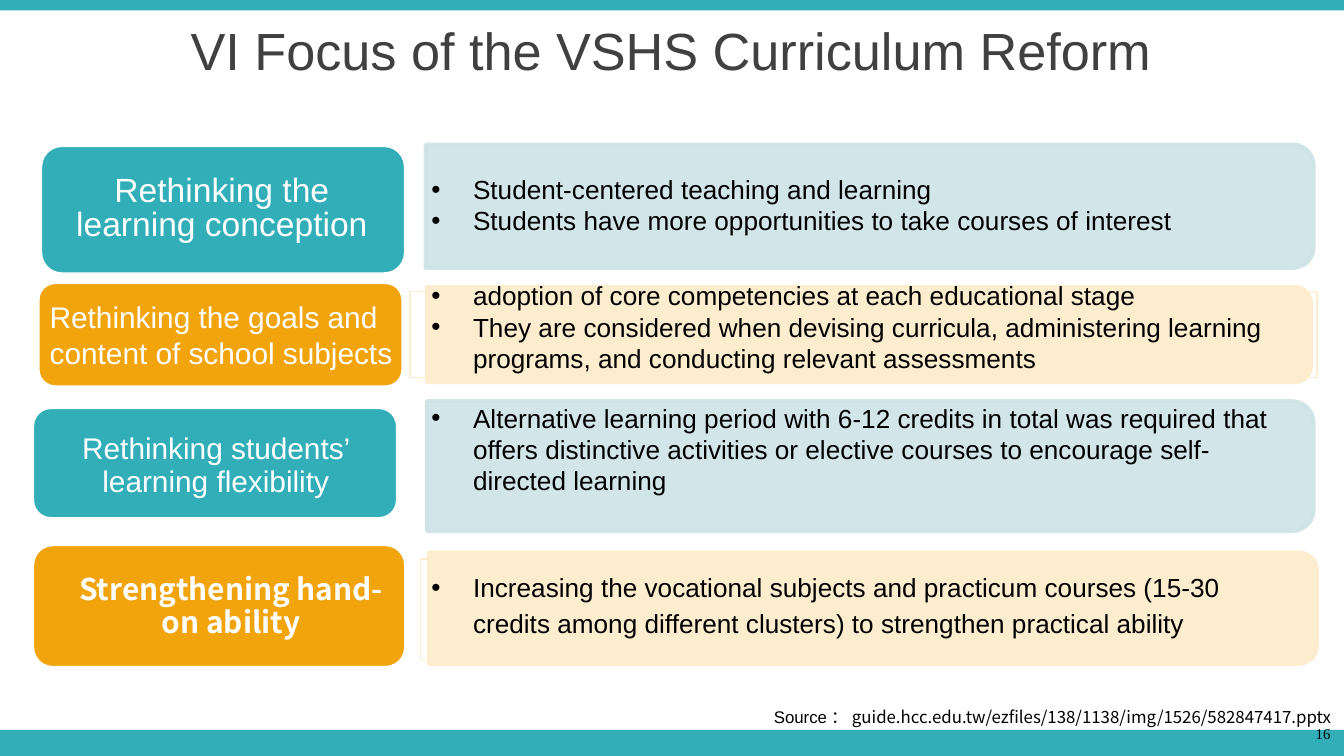
from dataclasses import dataclass

from lxml.etree import SubElement
from pptx import Presentation
from pptx.dml.color import RGBColor
from pptx.enum.shapes import MSO_SHAPE as Preset
from pptx.enum.text import MSO_ANCHOR as Anchor, MSO_AUTO_SIZE as AutoSize, PP_ALIGN as Align
from pptx.oxml.ns import qn
from pptx.util import Pt

COLORS = {
    "teal": "32AEB8", "orange": "F2A40D", "pale_teal": "CEE3E6",
    "pale_orange": "FCEDCF", "white": "FFFFFF", "black": "000000", "gray": "404040",
}
SANS, CJK, SERIF = "Arial", "Noto Sans CJK SC", "Times New Roman"
INDENT = 22.3


@dataclass
class Box:
    left: float
    top: float
    width: float
    height: float

    def inner(self, left, top, width, height):
        return Box(self.left + left, self.top + top, width, height)

    def lengths(self):
        return [Pt(n) for n in (self.left, self.top, self.width, self.height)]


def rgb(name):
    return RGBColor.from_string(COLORS[name])


def add_block(page, preset, box, fill=None, line=None, weight=2, alpha=None):
    block = page.shapes.add_shape(preset, *box.lengths())
    block.shadow.inherit = False
    if fill:
        block.fill.solid()
        block.fill.fore_color.rgb = rgb(fill)
    else:
        block.fill.background()
    if line:
        block.line.color.rgb = rgb(line)
        block.line.width = Pt(weight)
    else:
        block.line.fill.background()
    if alpha:
        for color in block._element.spPr.iter(qn("a:srgbClr")):
            SubElement(color, qn("a:alpha")).set("val", str(alpha * 1000))
    return block


def set_frame(shape, anchor=Anchor.TOP, inset=(7.2, 3.6)):
    frame = shape.text_frame
    frame.word_wrap = True
    frame.auto_size = AutoSize.NONE
    frame.vertical_anchor = anchor
    frame.margin_left = frame.margin_right = Pt(inset[0])
    frame.margin_top = frame.margin_bottom = Pt(inset[1])
    return frame


def add_span(para, text, size, color="black", font=SANS, bold=False):
    span = para.add_run()
    span.text = text
    span.font.size = Pt(size)
    span.font.name = font
    span.font.bold = bold
    span.font.color.rgb = rgb(color)


def set_para(para, align=Align.LEFT, spacing=None):
    para.alignment = align
    para.space_before = Pt(0)
    para.line_spacing = Pt(spacing) if spacing else 1.0


def place(shape, box):
    """Move a placeholder to its box and in front of the panels."""
    shape.left, shape.top, shape.width, shape.height = box.lengths()
    shape._element.getparent().append(shape._element)


def add_title(page, box):
    title = page.shapes.title
    place(title, box)
    para = set_frame(title, Anchor.MIDDLE).paragraphs[0]
    set_para(para, Align.CENTER)
    add_span(para, "VI Focus of the VSHS Curriculum Reform", 28, "gray")


def add_label(page, box, text_box, text, fill, size=16, align=Align.CENTER,
              spacing=18, font=SANS, bold=False):
    add_block(page, Preset.ROUNDED_RECTANGLE, box, fill, "white")
    label = page.shapes.add_textbox(*text_box.lengths())
    para = set_frame(label, Anchor.MIDDLE, (4.3, 2.2)).paragraphs[0]
    set_para(para, align, spacing)
    add_span(para, text, size, "white", font, bold)


def add_panel(page, box, fill, alpha=None):
    # Turned a quarter, so the rounded top corners face right
    turned = box.inner((box.width - box.height) / 2, (box.height - box.width) / 2,
                       box.height, box.width)
    panel = add_block(page, Preset.ROUND_2_SAME_RECTANGLE, turned, fill, fill, alpha=alpha)
    panel.rotation = 90


def fill_list(body, box, items, align=Align.LEFT, spacing=None):
    place(body, box)
    frame = set_frame(body)
    for number, item in enumerate(items):
        para = frame.add_paragraph() if number else frame.paragraphs[0]
        set_para(para, align, spacing)
        props = para._p.get_or_add_pPr()
        props.set("marL", str(Pt(INDENT)))
        props.set("indent", str(-Pt(INDENT)))
        SubElement(props, qn("a:buFont")).set("typeface", SANS)
        SubElement(props, qn("a:buChar")).set("char", "•")
        add_span(para, item, 14)


def add_row(page, body, box, row):
    add_label(page, box.inner(*row["label"]), box.inner(*row["label_text"]),
              row["text"], row["fill"], **row.get("label_style", {}))
    add_panel(page, box.inner(*row["panel"]), row["pale"], row.get("alpha"))
    if "outline" in row:
        add_block(page, Preset.RECTANGLE, box.inner(*row["outline"]),
                  line=row["pale"], weight=0.75)
    fill_list(body, box.inner(*row["list"]), row["items"], **row.get("list_style", {}))


def add_footer(page, box):
    source = page.shapes.add_textbox(*box.inner(401.8, 0, 318.2, 18).lengths())
    para = set_frame(source).paragraphs[0]
    set_para(para, Align.RIGHT)
    add_span(para, "Source：", 9)
    add_span(para, "guide.hcc.edu.tw/ezfiles/138/1138/img/1526/582847417.pptx", 9, font=CJK)
    number = page.shapes.add_textbox(*box.inner(558, 7.2, 162, 21.6).lengths())
    para = set_frame(number, Anchor.MIDDLE).paragraphs[0]
    set_para(para, Align.RIGHT)
    add_span(para, "16", 8, font=SERIF)


# Inner boxes are relative to the row's top left corner
TEAL = {"fill": "teal", "pale": "pale_teal", "alpha": 90}
ORANGE = {"fill": "orange", "pale": "pale_orange"}
ROWS = [
    {**TEAL, "box": Box(17.3, 77.4, 688, 69.5),
     "text": "Rethinking the learning conception", "label_style": {"size": 18},
     "label": (4.3, 0.4, 195.8, 69.1), "label_text": (6.5, 4, 190.1, 61.9),
     "panel": (210.6, 0, 475.9, 66.2), "list": (206.6, 11.9, 459.4, 41),
     "list_style": {"align": Align.JUSTIFY},
     "items": ["Student-centered teaching and learning",
               "Students have more opportunities to take courses of interest"]},
    {**ORANGE, "box": Box(17.3, 151.2, 688, 56.2),
     "text": "Rethinking the goals and content of school subjects",
     "label_style": {"align": Align.LEFT, "spacing": None},
     "label": (2.9, 0, 195.8, 56.2), "label_text": (5, 2.9, 193, 50.4),
     "panel": (211.3, 2.5, 473.8, 51.1), "outline": (202.3, 5, 486, 46.1),
     "list": (206.6, -5, 474.5, 58.3),
     "items": ["adoption of core competencies at each educational stage",
               "They are considered when devising curricula, administering learning "
               "programs, and conducting relevant assessments"]},
    {**TEAL, "box": Box(17.3, 214.9, 688, 69.8),
     "text": "Rethinking students’ learning flexibility",
     "label": (0, 3.3, 195.8, 59.8), "label_text": (2.9, 3.3, 190.8, 61.9),
     "panel": (211.3, 0, 475.2, 69.8), "list": (206.6, -3.2, 474.5, 58.3),
     "items": ["Alternative learning period with 6-12 credits in total was required that "
               "offers distinctive activities or elective courses to encourage "
               "self-directed learning"]},
    {**ORANGE, "box": Box(17.3, 291.6, 688, 66.2),
     "text": "Strengthening hand-on ability", "label_style": {"font": CJK, "bold": True},
     "label": (0, 0, 200.2, 66.2), "label_text": (14.4, 5, 184.3, 56.2),
     "panel": (212.4, 4.3, 475.9, 59.8), "outline": (208.1, 7.9, 478.8, 54),
     "list": (206.6, 8.6, 450, 45.4), "list_style": {"spacing": 19.2},
     "items": ["Increasing the vocational subjects and practicum courses (15-30 credits "
               "among different clusters) to strengthen practical ability"]},
]


def main():
    deck = Presentation()
    deck.slide_width, deck.slide_height = Pt(720), Pt(405)
    # The comparison layout offers a title and four bodies
    page = deck.slides.add_slide(deck.slide_layouts[4])
    bodies = [shape for shape in page.placeholders if shape.placeholder_format.idx]

    # Bars at the bottom and top edges
    for bar in (Box(0, 391, 720, 14), Box(0, 0, 720, 5.6)):
        add_block(page, Preset.RECTANGLE, bar, "teal")
    add_title(page, Box(-0.7, -7.2, 720, 67))
    for body, row in zip(bodies, ROWS):
        add_row(page, body, row["box"], row)
    add_footer(page, Box(0, 375.1, 720, 29.9))
    deck.save("out.pptx")


if __name__ == "__main__":
    main()
